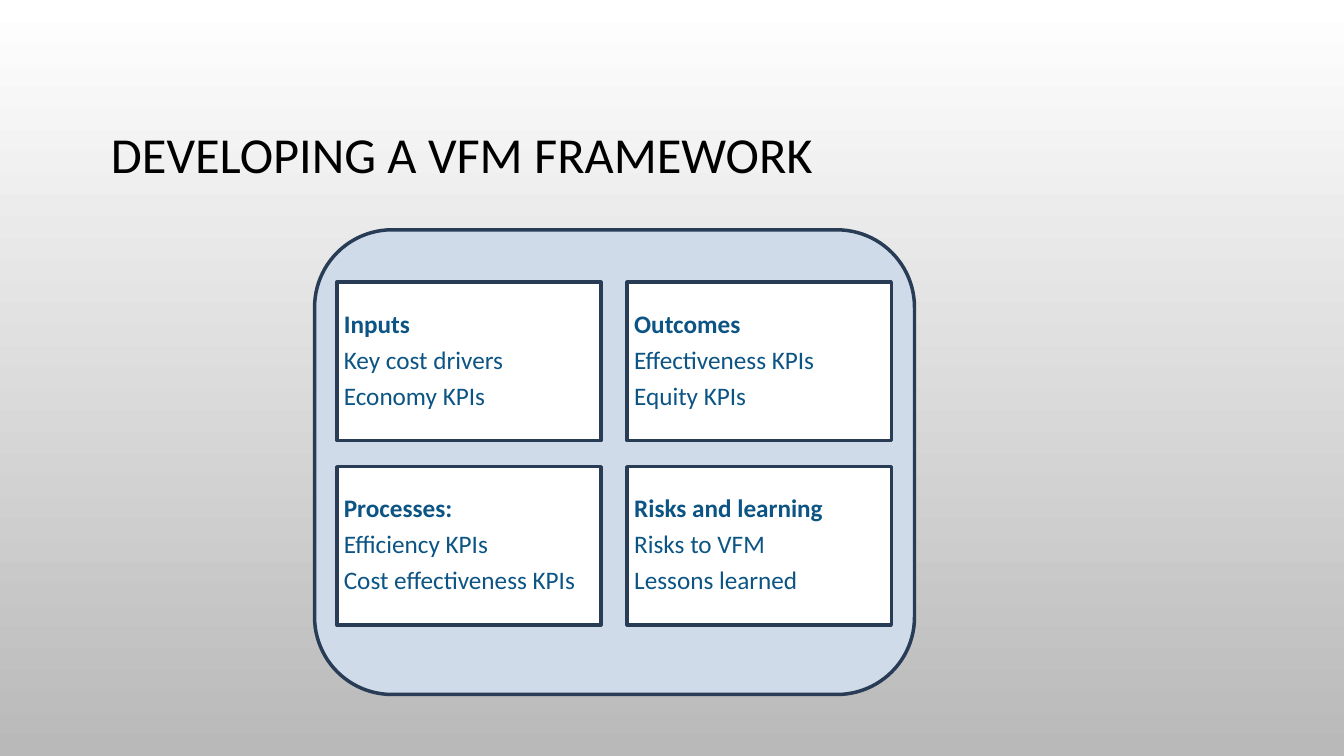
from pptx import Presentation, util as u
from pptx.dml.color import RGBColor
from pptx.enum import shapes as sh, text as tx

HUES = {"top": "FFFFFF", "base": "B9B9B9", "title": "000000", "panel": "D0DBE9",
        "card": "FFFFFF", "edge": "283C55", "text": "0B5484"}
CARDS = [
    ("Inputs", "Key cost drivers", "Economy KPIs"),
    ("Outcomes", "Effectiveness KPIs", "Equity KPIs"),
    ("Processes:", "Efficiency KPIs", "Cost effectiveness KPIs"),
    ("Risks and learning", "Risks to VFM", "Lessons learned"),
]


def hue(name):
    """Return the named colour."""
    return RGBColor.from_string(HUES[name])


def put(item, **vals):
    """Set each given attribute on an item."""
    for key, val in vals.items():
        setattr(item, key, val)


def paint(slide):
    """Fill the background with a vertical gradient."""
    fill = slide.background.fill
    fill.gradient()
    fill.gradient_angle = 270
    for stop, name, spot in zip(fill.gradient_stops, ("top", "base"), (0, 1)):
        stop.color.rgb = hue(name)
        stop.position = spot


def head(slide, box, words):
    """Place the title in its box."""
    title = slide.shapes.title
    put(title, **dict(zip(("left", "top", "width", "height"), map(u.Inches, box))))
    frame = title.text_frame
    put(frame, text=words, word_wrap=True, vertical_anchor=tx.MSO_ANCHOR.MIDDLE,
        auto_size=tx.MSO_AUTO_SIZE.NONE)
    para = frame.paragraphs[0]
    put(para, alignment=tx.PP_ALIGN.LEFT, line_spacing=0.9)
    put(para.font, name="Calibri", size=u.Pt(36))
    para.font.color.rgb = hue("title")


def block(slide, kind, box, name):
    """Draw an outlined shape in the named fill."""
    shape = slide.shapes.add_shape(kind, *map(u.Inches, box))
    shape.shadow.inherit = False
    shape.fill.solid()
    shape.fill.fore_color.rgb = hue(name)
    shape.line.color.rgb = hue("edge")
    shape.line.width = u.Pt(2.5)
    return shape


def card(slide, box, lines):
    """Draw a card with a bold heading and its lines."""
    frame = block(slide, sh.MSO_SHAPE.RECTANGLE, box, "card").text_frame
    pad = u.Inches(0.07)
    put(frame, text="\n".join(lines), word_wrap=True,
        vertical_anchor=tx.MSO_ANCHOR.MIDDLE, margin_left=pad, margin_right=pad,
        margin_top=pad, margin_bottom=pad)
    for row, para in enumerate(frame.paragraphs):
        put(para, alignment=tx.PP_ALIGN.LEFT, line_spacing=0.9, space_after=u.Pt(6.3))
        put(para.font, name="Calibri", size=u.Pt(18), bold=row == 0)
        para.font.color.rgb = hue("text")


def panel(slide, box):
    """Draw the rounded panel and its grid of cards."""
    block(slide, sh.MSO_SHAPE.ROUNDED_RECTANGLE, box, "panel")
    left, top = box[0] + 0.22, box[1] + 0.52
    wide, high, gap = 2.62, 1.57, 0.26
    for spot, lines in enumerate(CARDS):
        row, col = divmod(spot, 2)
        card(slide, (left + col * (wide + gap), top + row * (high + gap), wide, high), lines)


def main():
    """Build and save the slide."""
    deck = Presentation()
    put(deck, slide_width=u.Inches(13.33), slide_height=u.Inches(7.5))
    slide = deck.slides.add_slide(deck.slide_layouts[5])
    paint(slide)
    head(slide, (1, 0.68, 11.33, 1.75), "DEVELOPING A VFM FRAMEWORK")
    panel(slide, (3.12, 2.28, 5.95, 4.61))
    deck.save("out.pptx")


if __name__ == "__main__":
    main()
